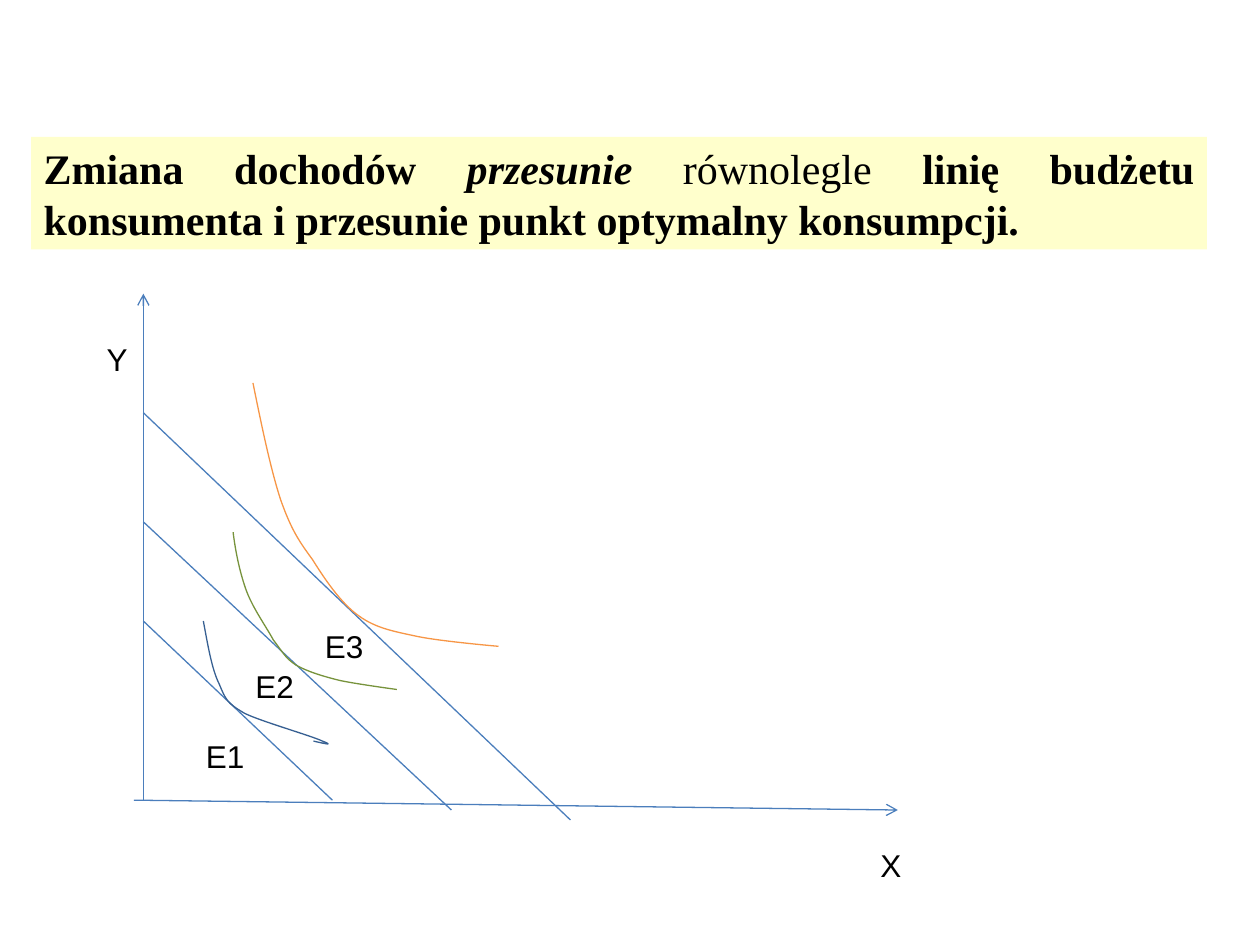
from lxml import etree
from pptx import Presentation
from pptx.dml.color import RGBColor
from pptx.enum.shapes import MSO_CONNECTOR, MSO_SHAPE
from pptx.enum.text import MSO_ANCHOR, MSO_AUTO_SIZE, PP_ALIGN
from pptx.oxml.ns import qn
from pptx.util import Cm, Pt

STRAIGHT = MSO_CONNECTOR.STRAIGHT
RECTANGLE = MSO_SHAPE.RECTANGLE
MIDDLE = MSO_ANCHOR.MIDDLE
GROW = MSO_AUTO_SIZE.SHAPE_TO_FIT_TEXT
JUSTIFY = PP_ALIGN.JUSTIFY


def rgb(color):
    return RGBColor.from_string(color)


def bend(shape):
    """Turn every three line segments of a freeform into one cubic curve."""
    segments = list(shape._element.iter(qn("a:lnTo")))
    for i in range(0, len(segments), 3):
        cubic = etree.Element(qn("a:cubicBezTo"))
        segments[i].addprevious(cubic)
        for segment in segments[i:i + 3]:
            cubic.append(segment[0])
            segment.getparent().remove(segment)


prs = Presentation()
prs.slide_width, prs.slide_height = Cm(25.4), Cm(19.05)
s = prs.slides.add_slide(prs.slide_layouts[6])

# Headline banner
banner = s.shapes.add_shape(RECTANGLE, Cm(0.63), Cm(2.76), Cm(23.7), Cm(2.27))
banner.shadow.inherit = False
banner.fill.solid()
banner.fill.fore_color.rgb = rgb("FFFFCC")
banner.line.fill.background()
tf = banner.text_frame
tf.word_wrap = True
tf.vertical_anchor = MIDDLE
p = tf.paragraphs[0]
p.alignment = JUSTIFY
for text, bold, italic in [
    ("Zmiana dochodów ", True, False),
    ("przesunie", True, True),
    (" równolegle ", False, False),
    ("linię budżetu konsumenta i przesunie punkt optymalny konsumpcji.", True, False),
]:
    r = p.add_run()
    r.text = text
    r.font.name = "Times New Roman"
    r.font.size = Pt(24)
    r.font.bold, r.font.italic = bold, italic
    r.font.color.rgb = rgb("000000")

# Axes (with arrowheads) and budget lines
AXIS_X = 2.89
for x1, y1, x2, y2, arrow in [
    (AXIS_X, 16.13, AXIS_X, 5.92, True),
    (2.7, 16.13, 18.1, 16.33, True),
    (AXIS_X, 12.52, 6.7, 16.13, False),
    (AXIS_X, 10.52, 9.1, 16.33, False),
    (AXIS_X, 8.32, 11.5, 16.53, False),
]:
    line = s.shapes.add_connector(STRAIGHT, Cm(x1), Cm(y1), Cm(x2), Cm(y2))
    line.line.color.rgb = rgb("4B7EBC")
    line.line.width = Pt(0.75)
    spPr = line._element.spPr
    if arrow:
        etree.SubElement(spPr.get_or_add_ln(), qn("a:tailEnd"), type="arrow")
    etree.SubElement(spPr, qn("a:effectLst"))

# Indifference curves: a start point, then three points per cubic segment
for color, points in [
    ("376092", [(4.1, 12.52), (4.19, 13), (4.27, 13.49), (4.42, 13.79),
                (4.55, 14.1), (4.57, 14.17), (4.93, 14.38),
                (5.28, 14.55), (6.27, 14.83), (6.5, 14.94),
                (6.76, 15.04), (6.53, 14.99), (6.32, 14.94)]),
    ("77933C", [(4.7, 10.73), (4.75, 11.13), (4.83, 11.51), (4.95, 11.86),
                (5.08, 12.24), (5.36, 12.62), (5.51, 12.9),
                (5.69, 13.13), (5.74, 13.26), (5.97, 13.41),
                (6.2, 13.54), (6.53, 13.64), (6.86, 13.72),
                (7.19, 13.79), (8, 13.9), (8, 13.9)]),
    ("F79646", [(5.1, 7.72), (5.28, 8.61), (5.46, 9.47), (5.66, 10.08),
                (5.87, 10.67), (6.02, 10.9), (6.3, 11.28),
                (6.55, 11.68), (6.88, 12.17), (7.24, 12.42),
                (7.59, 12.67), (7.95, 12.73), (8.41, 12.83),
                (8.89, 12.93), (10.05, 13.03), (10.05, 13.03)]),
]:
    (x, y), *rest = points
    builder = s.shapes.build_freeform(Cm(x), Cm(y))
    builder.add_line_segments([(Cm(px), Cm(py)) for px, py in rest], close=False)
    curve = builder.convert_to_shape()
    bend(curve)
    curve.shadow.inherit = False
    curve.fill.background()
    curve.line.color.rgb = rgb(color)
    curve.line.width = Pt(0.75)

# Axis and equilibrium labels
for text, x, y, width, wrap in [
    ("Y", 1.9, 6.73, 0.94, False),
    ("X", 17.5, 16.93, 0.74, True),
    ("E1", 3.9, 14.73, 1.3, False),
    ("E2", 4.9, 13.33, 1.4, True),
    ("E3", 6.3, 12.52, 1.3, False),
]:
    tf = s.shapes.add_textbox(Cm(x), Cm(y), Cm(width), Cm(1.02)).text_frame
    tf.text = text
    tf.word_wrap = wrap
    tf.auto_size = GROW
    r = tf.paragraphs[0].runs[0]
    r.font.name = "Arial"
    r.font.size = Pt(18)
    r.font.color.rgb = rgb("000000")

prs.save("out.pptx")
